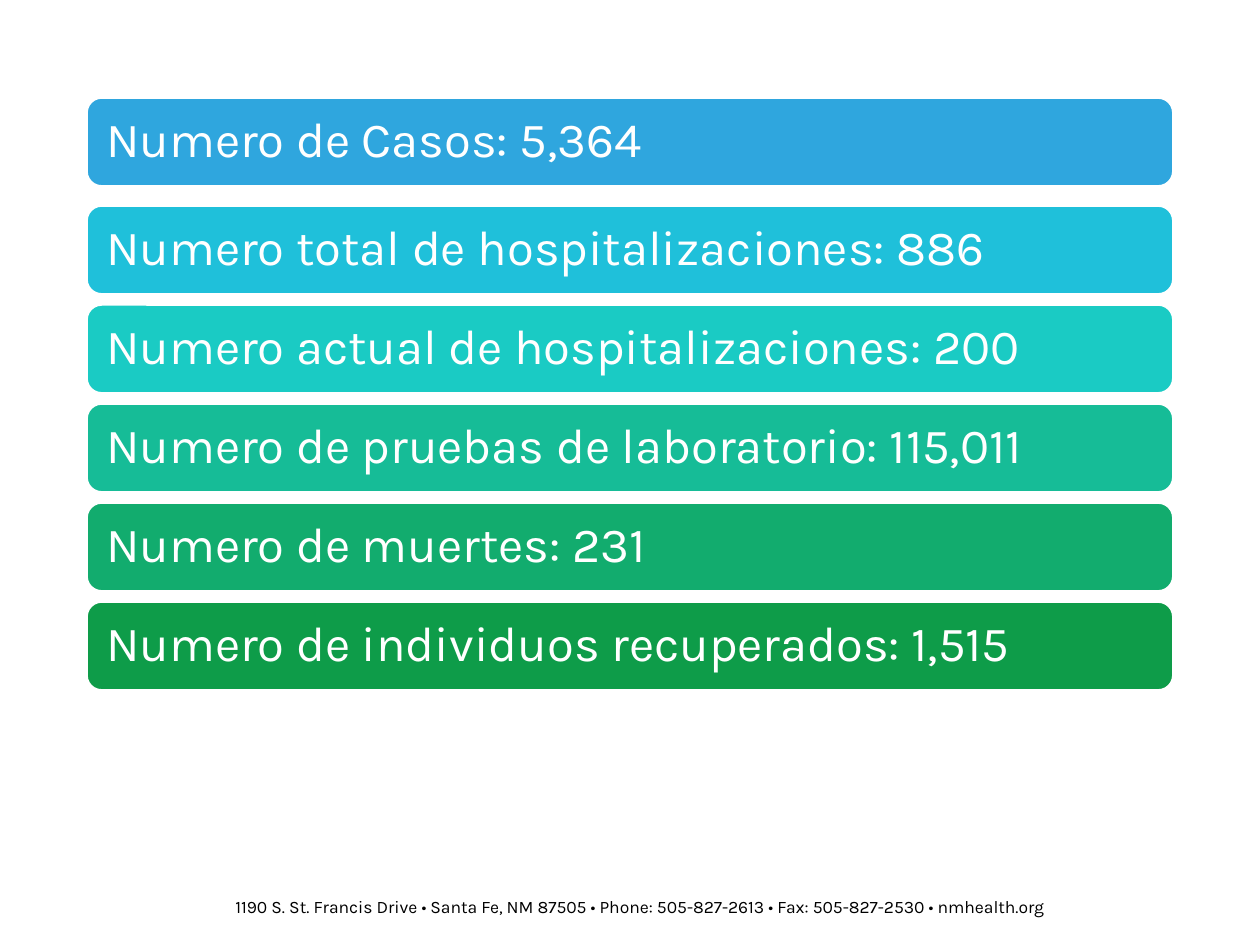
import pptx
import pptx.util
import pptx.dml.color
import pptx.enum.shapes
import pptx.enum.text

EMU_PER_PX = 914400 / 126
FONT = "Karla"
WHITE = "FFFFFF"

# Bar layout in px
BAR_LEFT, BAR_WIDTH, BAR_HEIGHT = 87, 1086, 88
FIRST_TOP, SECOND_TOP, BAR_PITCH = 98, 206, 99
BAR_INSET = 15

BARS = [
    ("Numero de Casos: 5,364", "2FA6DE"),
    ("Numero total de hospitalizaciones: 886", "1FC0DA"),
    ("Numero actual de hospitalizaciones: 200", "1ACBC4"),
    ("Numero de pruebas de laboratorio: 115,011", "16BC97"),
    ("Numero de muertes: 231", "12AC6E"),
    ("Numero de individuos recuperados: 1,515", "0E9C49"),
]
ADDRESS = ("1190 S. St. Francis Drive • Santa Fe, NM 87505 • Phone: 505-827-2613"
           " • Fax: 505-827-2530 • nmhealth.org")


def px(length):
    return pptx.util.Emu(round(length * EMU_PER_PX))


def color(hex_string):
    return pptx.dml.color.RGBColor.from_string(hex_string)


def write_text(shape, text, *, size, fill, anchor=pptx.enum.text.MSO_ANCHOR.TOP,
               inset=None, line_spacing=None):
    frame = shape.text_frame
    frame.word_wrap = True
    frame.vertical_anchor = anchor
    if inset is not None:
        frame.margin_left = frame.margin_right = px(inset)
        frame.margin_top = frame.margin_bottom = px(inset)
    para = frame.paragraphs[0]
    para.alignment = pptx.enum.text.PP_ALIGN.LEFT
    para.line_spacing = line_spacing
    span = para.add_run()
    span.text = text
    span.font.name = FONT
    span.font.size = pptx.util.Pt(size)
    span.font.color.rgb = color(fill)


def add_bar(page, top, text, fill):
    bar = page.shapes.add_shape(
        pptx.enum.shapes.MSO_SHAPE.ROUNDED_RECTANGLE,
        px(BAR_LEFT), px(top), px(BAR_WIDTH), px(BAR_HEIGHT))
    bar.shadow.inherit = False
    bar.fill.solid()
    bar.fill.fore_color.rgb = color(fill)
    bar.line.color.rgb = color(WHITE)
    bar.line.width = pptx.util.Pt(1)
    write_text(bar, text, size=28, fill=WHITE, inset=BAR_INSET, line_spacing=0.9,
               anchor=pptx.enum.text.MSO_ANCHOR.MIDDLE)


def add_footer(page):
    box = page.shapes.add_textbox(px(223), px(890), px(1033), px(34))
    write_text(box, ADDRESS, size=10, fill="000000")


def main():
    deck = pptx.Presentation()
    deck.slide_width, deck.slide_height = px(1260), px(945)
    page = deck.slides.add_slide(deck.slide_layouts[6])

    # Address line
    add_footer(page)

    # Headline bar, then the evenly spaced rest
    tops = [FIRST_TOP] + [SECOND_TOP + BAR_PITCH * i for i in range(len(BARS) - 1)]
    for top, (text, fill) in zip(tops, BARS):
        add_bar(page, top, text, fill)

    deck.save("out.pptx")


if __name__ == "__main__":
    main()
